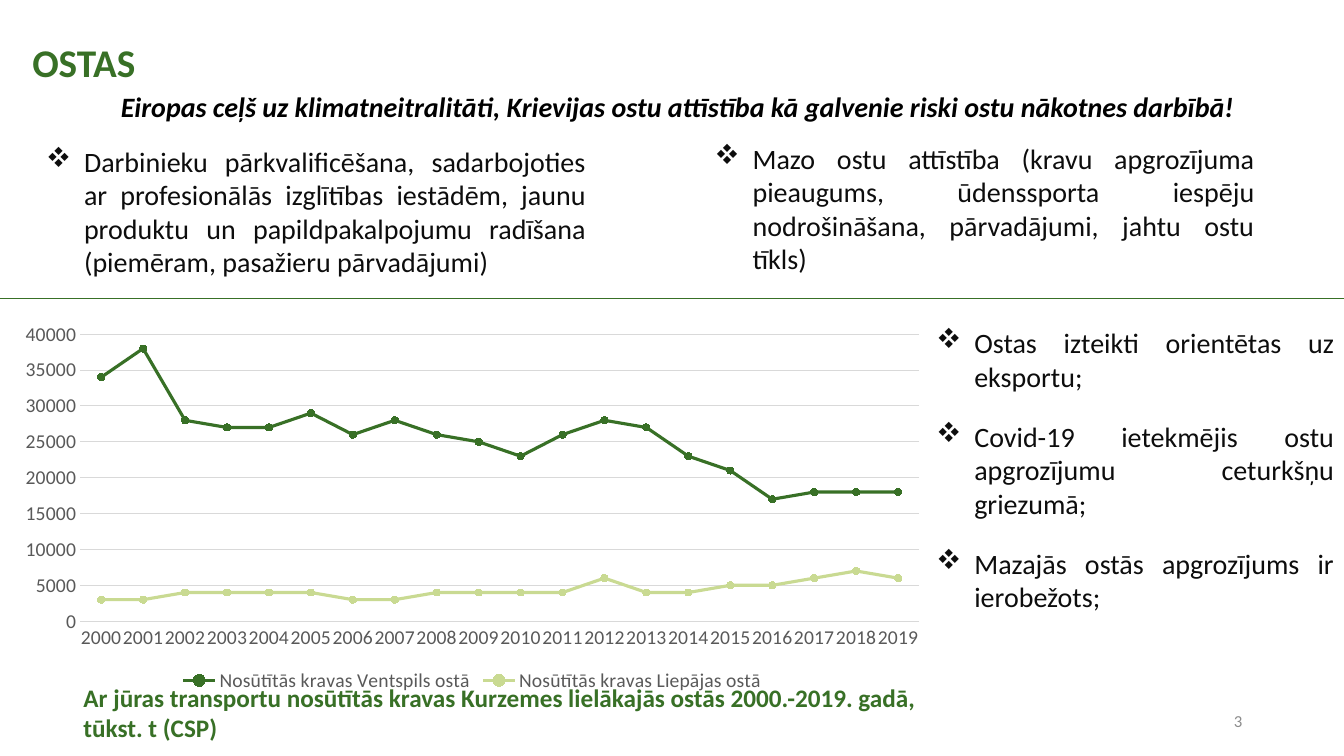
"""Build the slide on the ports of Kurzeme: key points, cargo chart and findings."""
from dataclasses import dataclass

from lxml import etree
from pptx import Presentation
from pptx.chart.data import CategoryChartData
from pptx.dml.color import RGBColor
from pptx.enum.chart import XL_CHART_TYPE, XL_LEGEND_POSITION, XL_MARKER_STYLE, XL_TICK_MARK
from pptx.enum.shapes import MSO_CONNECTOR
from pptx.enum.text import MSO_ANCHOR, PP_ALIGN
from pptx.oxml.ns import qn
from pptx.util import Inches, Pt

LEFT, RIGHT, JUSTIFY = PP_ALIGN.LEFT, PP_ALIGN.RIGHT, PP_ALIGN.JUSTIFY
TOP, MIDDLE = MSO_ANCHOR.TOP, MSO_ANCHOR.MIDDLE
LINE_MARKERS = XL_CHART_TYPE.LINE_MARKERS
BOTTOM = XL_LEGEND_POSITION.BOTTOM
CIRCLE = XL_MARKER_STYLE.CIRCLE
NO_TICK = XL_TICK_MARK.NONE
STRAIGHT = MSO_CONNECTOR.STRAIGHT


@dataclass(frozen=True)
class Theme:
    font: str = "Calibri"
    bullet_font: str = "Wingdings"
    green: RGBColor = RGBColor(0x38, 0x70, 0x26)
    lime: RGBColor = RGBColor(0xC9, 0xDA, 0x92)
    black: RGBColor = RGBColor(0, 0, 0)
    ink: RGBColor = RGBColor(0x0D, 0x0D, 0x0D)
    label: RGBColor = RGBColor(0x59, 0x59, 0x59)
    grid: RGBColor = RGBColor(0xD9, 0xD9, 0xD9)
    number: RGBColor = RGBColor(0x8C, 0x8C, 0x8C)
    title_size: int = 28
    body_size: int = 20
    caption_size: int = 18
    chart_size: int = 14
    number_size: int = 12


theme = Theme()


def style_font(font, size, color, bold=False, italic=False):
    font.name, font.size = theme.font, Pt(size)
    font.bold, font.italic = bold, italic
    font.color.rgb = color


def write_text(shape, text, box, size=theme.body_size, color=theme.ink, bold=False,
               italic=False, align=JUSTIFY, anchor=TOP, bullet=False):
    shape.left, shape.top, shape.width, shape.height = map(Inches, box)
    frame = shape.text_frame
    frame.word_wrap = True
    frame.vertical_anchor = anchor
    paragraph = frame.paragraphs[0]
    paragraph.alignment = align
    run = paragraph.add_run()
    run.text = text
    style_font(run.font, size, color, bold, italic)
    if bullet:
        properties = paragraph._p.get_or_add_pPr()
        properties.set("marL", str(Inches(0.375)))
        properties.set("indent", str(-Inches(0.375)))
        etree.SubElement(properties, qn("a:buFont"), typeface=theme.bullet_font, charset="2")
        etree.SubElement(properties, qn("a:buChar"), char="v")


presentation = Presentation()
presentation.slide_width, presentation.slide_height = Inches(13.33), Inches(7.5)
slide = presentation.slides.add_slide(presentation.slide_layouts[5])

write_text(slide.shapes.title, "OSTAS", (0.22, 0.35, 2.02, 0.53), size=theme.title_size,
           color=theme.green, bold=True, align=LEFT, anchor=MIDDLE)

cargo = CategoryChartData()
cargo.categories = [str(year) for year in range(2000, 2020)]
cargo.add_series("Nosūtītās kravas Ventspils ostā", [
    34000, 38000, 28000, 27000, 27000, 29000, 26000, 28000, 26000, 25000,
    23000, 26000, 28000, 27000, 23000, 21000, 17000, 18000, 18000, 18000])
cargo.add_series("Nosūtītās kravas Liepājas ostā", [
    3000, 3000, 4000, 4000, 4000, 4000, 3000, 3000, 4000, 4000,
    4000, 4000, 6000, 4000, 4000, 5000, 5000, 6000, 7000, 6000])
chart = slide.shapes.add_chart(LINE_MARKERS, Inches(0.07), Inches(3.12),
                               Inches(9.23), Inches(3.79), cargo).chart
style_font(chart.font, theme.chart_size, theme.black)
chart.has_title = False
chart.has_legend = True
chart.legend.position = BOTTOM
chart.legend.include_in_layout = False
style_font(chart.legend.font, theme.chart_size, theme.label)

years, tonnes = chart.category_axis, chart.value_axis
for axis in (years, tonnes):
    axis.major_tick_mark = axis.minor_tick_mark = NO_TICK
    style_font(axis.tick_labels.font, theme.chart_size, theme.label)
    axis._element.find(qn("c:txPr")).find(qn("a:bodyPr")).set("rot", "-60000000")
tonnes.minimum_scale, tonnes.maximum_scale, tonnes.major_unit = 0, 40000, 5000
tonnes.format.line.fill.background()
for line in (years.format.line, tonnes.major_gridlines.format.line):
    line.color.rgb = theme.grid
    line.width = Pt(0.75)

for series, color in zip(chart.plots[0].series, (theme.green, theme.lime)):
    series.smooth = False
    series.format.line.color.rgb = color
    series.format.line.width = Pt(2.25)
    series.marker.style, series.marker.size = CIRCLE, 5
    series.marker.format.fill.solid()
    series.marker.format.fill.fore_color.rgb = color
    series.marker.format.line.color.rgb = color

divider = slide.shapes.add_connector(STRAIGHT, 0, Inches(2.96),
                                     presentation.slide_width, Inches(2.96))
divider.line.color.rgb = theme.green
divider.line.width = Pt(0.5)
etree.SubElement(divider._element.spPr, qn("a:effectLst"))

bullets = [
    ("Darbinieku pārkvalificēšana, sadarbojoties ar profesionālās izglītības iestādēm, jaunu "
     "produktu un papildpakalpojumu radīšana (piemēram, pasažieru pārvadājumi)",
     (0.36, 1.38, 5.55, 1.45)),
    ("Mazo ostu attīstība (kravu apgrozījuma pieaugums, ūdenssporta iespēju nodrošināšana, "
     "pārvadājumi, jahtu ostu tīkls)", (6.99, 1.35, 5.55, 1.45)),
    ("Ostas izteikti orientētas uz eksportu;", (9.19, 3.18, 4.14, 0.77)),
    ("Covid-19 ietekmējis ostu apgrozījumu ceturkšņu griezumā;", (9.19, 4.11, 4.14, 1.11)),
    ("Mazajās ostās apgrozījums ir ierobežots;", (9.19, 5.37, 4.14, 0.77)),
]
for text, box in bullets:
    write_text(slide.shapes.add_textbox(0, 0, 0, 0), text, box, bullet=True)

labels = [
    ("Eiropas ceļš uz klimatneitralitāti, Krievijas ostu attīstība kā galvenie riski ostu "
     "nākotnes darbībā!", (1.1, 0.84, 11.45, 0.44),
     dict(color=theme.black, bold=True, italic=True)),
    ("Ar jūras transportu nosūtītās kravas Kurzemes lielākajās ostās 2000.-2019. gadā, "
     "tūkst. t (CSP)", (0.73, 6.72, 9, 1.01),
     dict(size=theme.caption_size, color=theme.green, bold=True, align=LEFT)),
    ("3", (9.42, 6.95, 3, 0.4),
     dict(size=theme.number_size, color=theme.number, align=RIGHT, anchor=MIDDLE)),
]
for text, box, style in labels:
    write_text(slide.shapes.add_textbox(0, 0, 0, 0), text, box, **style)

presentation.save("out.pptx")
